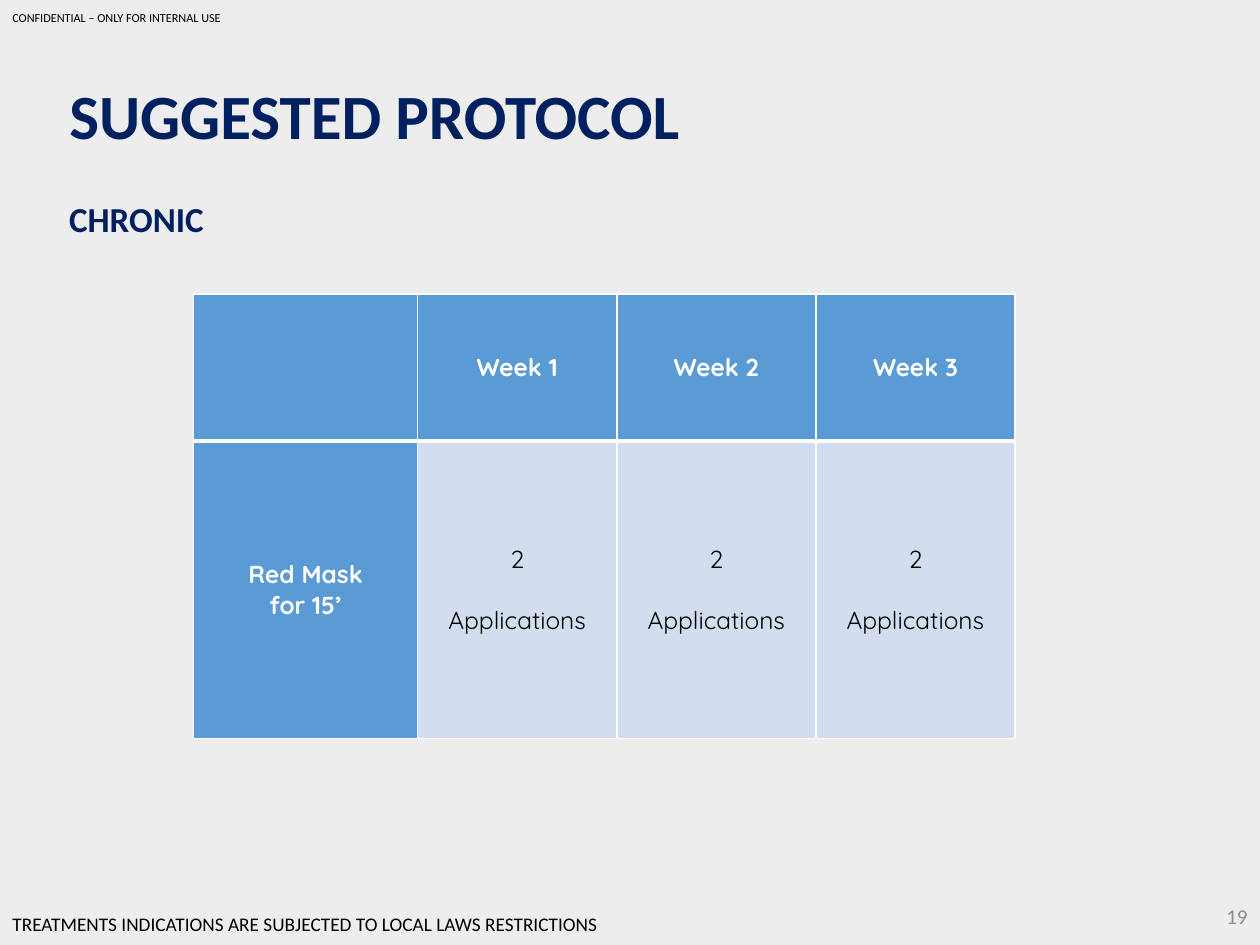
from lxml import etree
from pptx import Presentation
from pptx import util as u
from pptx.dml.color import RGBColor
from pptx.enum import text
from pptx.oxml import ns

NAVY = RGBColor(0x00, 0x20, 0x60)
BLACK = RGBColor(0x00, 0x00, 0x00)
WHITE = RGBColor(0xFF, 0xFF, 0xFF)
GREY = RGBColor(0x8C, 0x8C, 0x8C)
BLUE = RGBColor(0x5B, 0x9B, 0xD5)
PALE_BLUE = RGBColor(0xD2, 0xDE, 0xEF)
BACKGROUND = RGBColor(0xED, 0xED, 0xED)

LEFT, CENTER, RIGHT = (text.PP_ALIGN.LEFT, text.PP_ALIGN.CENTER,
                       text.PP_ALIGN.RIGHT)
TOP, MIDDLE = text.MSO_ANCHOR.TOP, text.MSO_ANCHOR.MIDDLE


def apply(target, values):
    for name, value in values.items():
        setattr(target, name, value)


class ProtocolSlide:
    body_font = "Calibri"
    table_font = "Quicksand"
    table_size = 14
    line_gap = 17.5

    def __init__(self, deck):
        self.slide = deck.slides.add_slide(deck.slide_layouts[5])
        fill = self.slide.background.fill
        fill.solid()
        fill.fore_color.rgb = BACKGROUND

    def add_lines(self, frame, lines, size, color, font, bold=False,
                  align=LEFT, gap=0):
        """Fill a frame with one paragraph per line, gap points apart."""
        for index, line in enumerate(lines):
            paragraph = frame.add_paragraph() if index else frame.paragraphs[0]
            apply(paragraph, {"alignment": align,
                              "space_before": u.Pt(gap if index else 0)})
            run = paragraph.add_run()
            run.text = line
            apply(run.font, {"name": font, "size": u.Pt(size), "bold": bold})
            run.font.color.rgb = color

    def place(self, shape, box, words, size, color, bold=False, align=LEFT,
              anchor=TOP, wrap=True):
        apply(shape, dict(zip(("left", "top", "width", "height"),
                              map(u.Pt, box))))
        apply(shape.text_frame, {"word_wrap": wrap, "vertical_anchor": anchor,
                                 "auto_size": text.MSO_AUTO_SIZE.NONE})
        self.add_lines(shape.text_frame, [words], size, color, self.body_font,
                       bold, align)

    def title(self, box, words, size, color):
        self.place(self.slide.shapes.title, box, words, size, color, bold=True)

    def label(self, box, words, size, color, **style):
        shape = self.slide.shapes.add_textbox(0, 0, 0, 0)
        self.place(shape, box, words, size, color, **style)

    def borders(self, cell, widths):
        """Draw white lines on the left, right, top and bottom of a cell."""
        properties = cell._tc.get_or_add_tcPr()
        for index, (side, width) in enumerate(zip("LRTB", widths)):
            line = etree.Element(ns.qn(f"a:ln{side}"), w=str(u.Pt(width)))
            fill = etree.SubElement(line, ns.qn("a:solidFill"))
            etree.SubElement(fill, ns.qn("a:srgbClr"), val=str(WHITE))
            properties.insert(index, line)

    def table(self, left, top, columns, rows, content):
        table = self.slide.shapes.add_table(
            len(rows), len(columns), u.Pt(left), u.Pt(top),
            u.Pt(sum(columns)), u.Pt(sum(rows))).table
        apply(table, {"first_row": False, "horz_banding": False})
        for column, width in zip(table.columns, columns):
            column.width = u.Pt(width)
        for row, height in zip(table.rows, rows):
            row.height = u.Pt(height)
        for r, row in enumerate(content):
            for c, lines in enumerate(row):
                self.cell(table.cell(r, c), lines, r == 0, c == 0)

    def cell(self, cell, lines, in_header, in_first_column):
        heading = in_header or in_first_column
        apply(cell, {"margin_left": u.Pt(5), "margin_right": u.Pt(5),
                     "margin_top": 0, "margin_bottom": 0,
                     "vertical_anchor": MIDDLE})
        cell.fill.solid()
        cell.fill.fore_color.rgb = BLUE if heading else PALE_BLUE
        self.borders(cell, (1, 1, 1, 3) if in_header else (1, 1, 3, 1))
        self.add_lines(cell.text_frame, lines, self.table_size,
                       WHITE if heading else BLACK, self.table_font, heading,
                       CENTER, 0 if heading else self.line_gap)


def main():
    deck = Presentation()
    apply(deck, {"slide_width": u.Pt(720), "slide_height": u.Pt(540)})
    page = ProtocolSlide(deck)

    page.label((668, 509, 52, 29), "19", 12, GREY, align=RIGHT, anchor=MIDDLE)
    page.title((32.4, 40.3, 514, 51), "SUGGESTED PROTOCOL", 36, NAVY)
    page.label((0, 2.2, 136, 16), "CONFIDENTIAL – ONLY FOR INTERNAL USE", 7,
               BLACK, wrap=False)

    weeks = [[f"Week {number}"] for number in (1, 2, 3)]
    doses = [["2", "Applications"] for _ in weeks]
    page.table(110.7, 168, [128, *[113.8] * len(weeks)], [84, 170],
               [[[], *weeks], [["Red Mask", "for 15’"], *doses]])

    page.label((32.4, 109.4, 92, 32), "CHRONIC", 20, NAVY, bold=True,
               wrap=False)
    page.label((0, 517.7, 574, 21),
               "TREATMENTS INDICATIONS ARE SUBJECTED TO LOCAL LAWS RESTRICTIONS",
               11, BLACK)
    deck.save("out.pptx")


if __name__ == "__main__":
    main()
